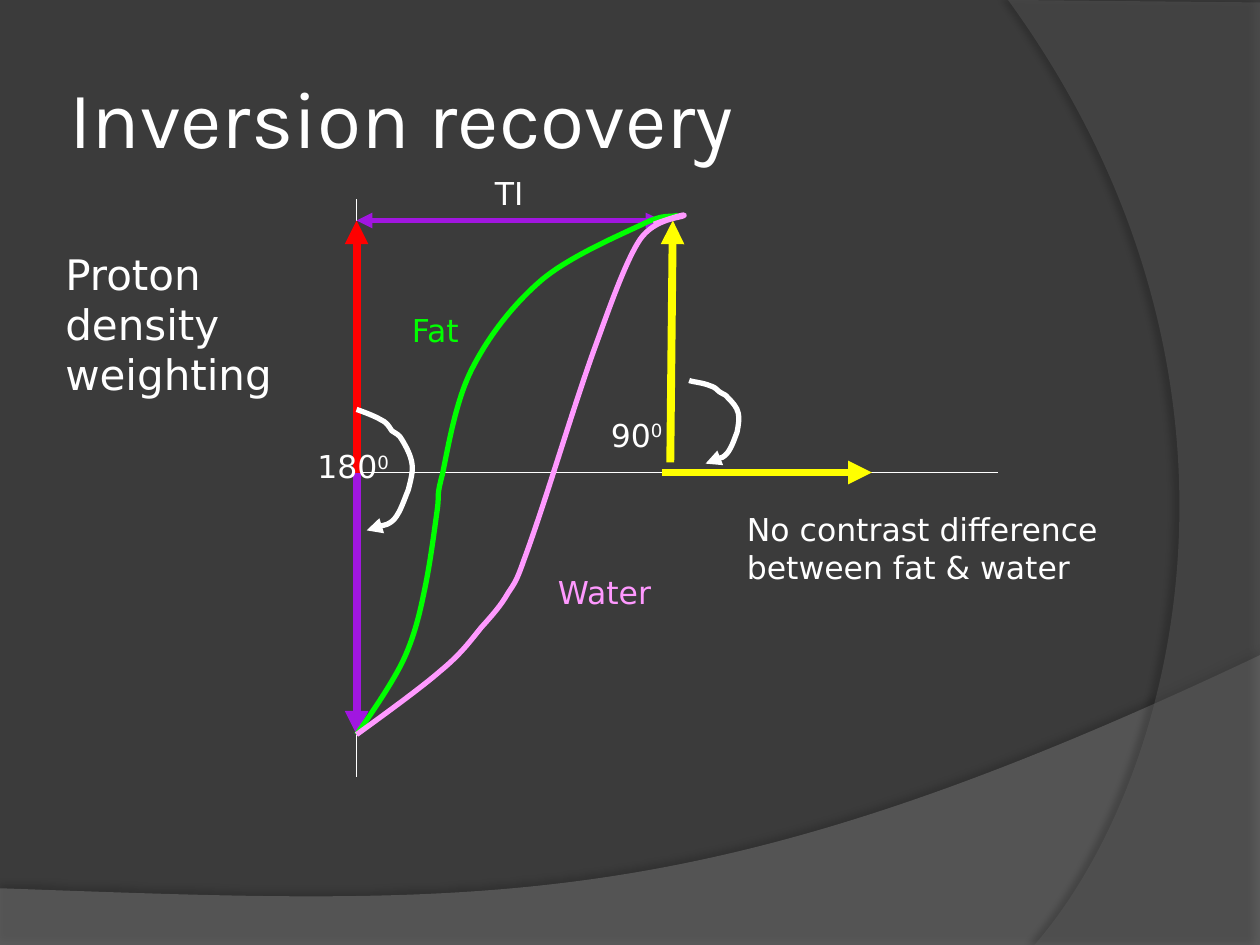
from lxml.etree import Element, SubElement
from pptx import Presentation
from pptx.dml.color import RGBColor
from pptx.enum.shapes import MSO_CONNECTOR
from pptx.enum.text import MSO_ANCHOR, MSO_AUTO_SIZE
from pptx.oxml.ns import qn
from pptx.util import Inches, Pt

COLORS = {
    "background": "3B3B3B", "wave": "7F7F7F", "side": "5E5E5E",
    "white": "FFFFFF", "red": "FF0000", "purple": "A116E0",
    "yellow": "FFFF00", "fat": "00FF00", "water": "FF99FF", "shadow": "000000",
}


def add_curve(shapes, start, segments, close=False):
    points = [seg[i:i + 2] for seg in segments for i in range(0, len(seg), 2)]
    builder = shapes.build_freeform(start[0] * 100, start[1] * 100, scale=Inches(0.01))
    builder.add_line_segments([(x * 100, y * 100) for x, y in points], close=close)
    sp = builder.convert_to_shape()
    sp.shadow.inherit = False
    steps = iter(list(sp._element.iter(qn("a:lnTo"))))
    for seg in segments:
        step = next(steps)
        if len(seg) == 6:
            bezier = Element(qn("a:cubicBezTo"))
            step.addprevious(bezier)
            for part in (step, next(steps), next(steps)):
                bezier.append(part[0])
                part.getparent().remove(part)
    return sp


def style_line(sp, color, width, ends=()):
    sp.line.color.rgb = RGBColor.from_string(COLORS[color])
    sp.line.width = Pt(width)
    for end in ends:
        SubElement(sp._element.spPr.find(qn("a:ln")), qn(f"a:{end}End"), type="triangle")


prs = Presentation()
prs.slide_width, prs.slide_height = Inches(10), Inches(7.5)
s = prs.slides.add_slide(prs.slide_layouts[6])
s.background.fill.solid()
s.background.fill.fore_color.rgb = RGBColor.from_string(COLORS["background"])

backdrops = [
    ("wave", 45, (0, 7.05),
     [(0, 7.5), (10, 7.5), (10, 5.2), (5.59, 7.29, 3.91, 7.19, 0, 7.05)], 35, 3.5, 270),
    ("side", 40, (10, 0.02),
     [(10, 7.5), (8.21, 7.5), (9.35, 6.19, 10.18, 3, 8, 0), (10, 0.02)], 45, 4, 180),
]
for color, alpha, start, segments, shade, distance, angle in backdrops:
    sp = add_curve(s.shapes, start, segments, close=True)
    sp.fill.solid()
    sp.fill.fore_color.rgb = RGBColor.from_string(COLORS[color])
    sp.line.fill.background()
    fill_color = sp._element.spPr.find(qn("a:solidFill"))[0]
    SubElement(fill_color, qn("a:alpha"), val=str(alpha * 1000))
    shadow = SubElement(sp._element.spPr.find(qn("a:effectLst")), qn("a:outerShdw"),
                        blurRad=str(Pt(4)), dist=str(Pt(distance)),
                        dir=str(angle * 60000), algn="ctr", rotWithShape="0")
    shadow_color = SubElement(shadow, qn("a:srgbClr"), val=COLORS["shadow"])
    SubElement(shadow_color, qn("a:alpha"), val=str(shade * 1000))

lines = [
    (2.83, 1.58, 2.83, 6.17, "white", 0.75, ()),
    (2.83, 3.75, 7.92, 3.75, "white", 0.75, ()),
    (2.83, 3.75, 2.83, 1.75, "red", 4.5, ("tail",)),
    (2.83, 3.75, 2.83, 5.83, "purple", 4.5, ("tail",)),
    (2.83, 1.75, 5.25, 1.75, "purple", 3, ("head", "tail")),
    (5.32, 3.67, 5.34, 1.75, "yellow", 4.5, ("tail",)),
    (5.25, 3.75, 6.92, 3.75, "yellow", 4.5, ("tail",)),
]
for x1, y1, x2, y2, color, width, ends in lines:
    line = s.shapes.add_connector(MSO_CONNECTOR.STRAIGHT, Inches(x1), Inches(y1),
                                  Inches(x2), Inches(y2))
    style_line(line, color, width, ends)
    SubElement(line._element.spPr, qn("a:effectLst"))

curves = [
    ("fat", (), (2.83, 5.83), [
        (2.9, 5.73, 3.12, 5.42, 3.21, 5.22), (3.3, 5.02, 3.34, 4.83, 3.38, 4.63),
        (3.42, 4.43, 3.45, 4.19, 3.47, 4.05), (3.49, 3.9, 3.46, 3.96, 3.51, 3.77),
        (3.55, 3.59, 3.61, 3.2, 3.74, 2.94), (3.87, 2.68, 4.06, 2.43, 4.29, 2.23),
        (4.51, 2.04, 4.91, 1.87, 5.1, 1.78), (5.28, 1.69, 5.32, 1.73, 5.38, 1.71)]),
    ("water", (), (2.83, 5.83), [
        (2.94, 5.75, 3.33, 5.47, 3.49, 5.33), (3.66, 5.19, 3.73, 5.09, 3.82, 4.98),
        (3.91, 4.88, 3.98, 4.8, 4.03, 4.71), (4.09, 4.62, 4.1, 4.61, 4.16, 4.44),
        (4.22, 4.28, 4.31, 4.01, 4.4, 3.73), (4.49, 3.45, 4.6, 3.1, 4.71, 2.79),
        (4.82, 2.49, 4.96, 2.08, 5.08, 1.9), (5.2, 1.73, 5.41, 1.73, 5.43, 1.71),
        (5.45, 1.69, 5.24, 1.76, 5.19, 1.78)]),
    ("white", ("tail",), (2.83, 3.25), [
        (2.86, 3.26, 2.97, 3.3, 3.02, 3.33), (3.07, 3.35, 3.09, 3.39, 3.11, 3.42),
        (3.14, 3.44, 3.17, 3.45, 3.19, 3.49), (3.22, 3.54, 3.26, 3.61, 3.27, 3.68),
        (3.28, 3.74, 3.26, 3.81, 3.24, 3.89), (3.21, 3.96, 3.18, 4.06, 3.13, 4.12),
        (3.08, 4.17, 2.96, 4.19, 2.91, 4.21)]),
    ("white", ("tail",), (5.47, 3.02), [
        (5.49, 3.03, 5.59, 3.04, 5.63, 3.06), (5.67, 3.07, 5.69, 3.09, 5.71, 3.11),
        (5.74, 3.13, 5.76, 3.13, 5.78, 3.16), (5.81, 3.19, 5.85, 3.23, 5.86, 3.28),
        (5.87, 3.32, 5.86, 3.38, 5.85, 3.43), (5.83, 3.48, 5.81, 3.55, 5.77, 3.6),
        (5.73, 3.64, 5.64, 3.66, 5.6, 3.68)]),
]
for color, ends, start, segments in curves:
    sp = add_curve(s.shapes, start, segments)
    sp.fill.background()
    style_line(sp, color, 3, ends)

texts = [
    ("Inversion recovery", "", 0.5, 0.3, 8.17, 1.25, 46, "Karla", "white"),
    ("180", "0", 2.42, 3.5, 0.83, 0.4, 18, "DejaVu Sans", "white"),
    ("TI", "", 3.83, 1.33, 0.75, 0.4, 18, "DejaVu Sans", "white"),
    ("Fat", "", 3.17, 2.42, 0.75, 0.4, 18, "DejaVu Sans", "fat"),
    ("Water", "", 4.33, 4.5, 1.25, 0.4, 18, "DejaVu Sans", "water"),
    ("90", "0", 4.75, 3.25, 0.75, 0.4, 18, "DejaVu Sans", "white"),
    ("Proton density weighting", "", 0.42, 1.92, 2.25, 1.3, 24, "DejaVu Sans", "white"),
    ("No contrast difference between fat & water", "", 5.83, 4, 3.5, 0.7, 18,
     "DejaVu Sans", "white"),
]
for text, superscript, left, top, width, height, size, font, color in texts:
    box = s.shapes.add_textbox(Inches(left), Inches(top), Inches(width), Inches(height))
    tf = box.text_frame
    tf.word_wrap = True
    if font == "Karla":
        tf.vertical_anchor = MSO_ANCHOR.MIDDLE
        tf.margin_left = tf.margin_right = Inches(0.05)
    else:
        tf.auto_size = MSO_AUTO_SIZE.SHAPE_TO_FIT_TEXT
    p = tf.paragraphs[0]
    p.font.size = Pt(size)
    p.font.name = font
    p.font.color.rgb = RGBColor.from_string(COLORS[color])
    p.add_run().text = text
    if superscript:
        r = p.add_run()
        r.text = superscript
        r._r.get_or_add_rPr().set("baseline", "30000")

prs.save("out.pptx")
